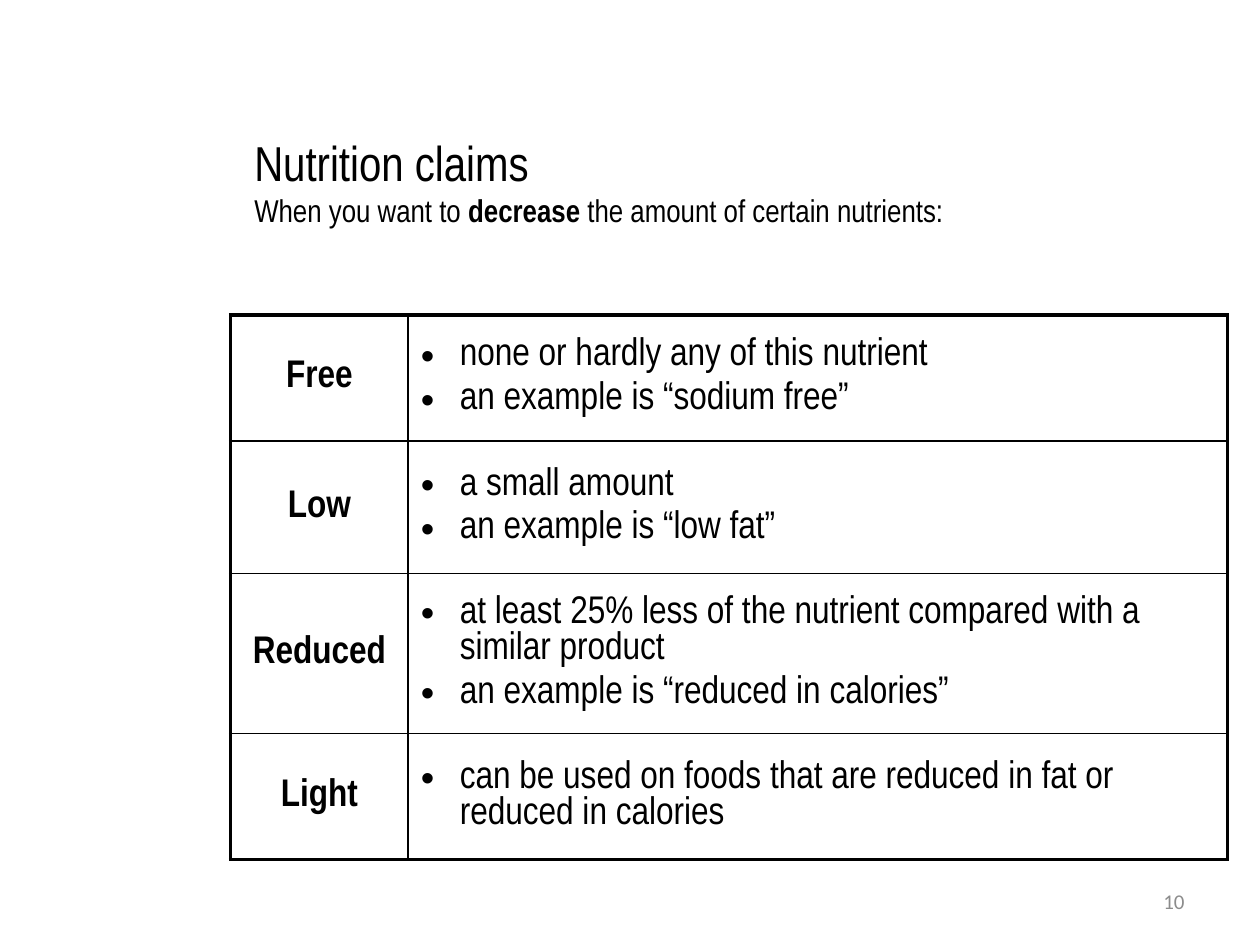
from pptx import Presentation
from pptx.dml.color import RGBColor
from pptx.enum.text import MSO_ANCHOR as Anchor, PP_ALIGN as Align
from pptx.oxml.ns import qn
from pptx.util import Inches, Pt
from lxml.etree import SubElement

BLACK = RGBColor(0, 0, 0)
GREY = RGBColor(0x8C, 0x8C, 0x8C)
BODY_FONT = "Arial Narrow"
THICK, THIN = Pt(2.25), Pt(1)

CLAIMS = [
    ("Free", 1, ["none or hardly any of this nutrient",
                 "an example is “sodium free”"]),
    ("Low", 1.05, ["a small amount", "an example is “low fat”"]),
    ("Reduced", 1.27, ["at least 25% less of the nutrient compared with a similar product",
                       "an example is “reduced in calories”"]),
    ("Light", 1, ["can be used on foods that are reduced in fat or reduced in calories"]),
]
COLUMN_WIDTHS = [1.41, 6.5]


def add_run(p, text, size, bold=False, font=BODY_FONT, color=BLACK):
    """Append a formatted run to a paragraph."""
    r = p.add_run()
    r.text = text
    r.font.size, r.font.bold, r.font.name = Pt(size), bold, font
    r.font.color.rgb = color


def add_text_frame(slide, left, top, width, height):
    """Add a wrapping text box and return its text frame."""
    box = slide.shapes.add_textbox(Inches(left), Inches(top), Inches(width), Inches(height))
    box.text_frame.word_wrap = True
    return box.text_frame


def add_heading(slide, left, top, width, height):
    """Write the title and the line that introduces the table."""
    tf = add_text_frame(slide, left, top, width, height)
    add_run(tf.paragraphs[0], "Nutrition claims", 28)
    p = tf.add_paragraph()
    add_run(p, "When you want to ", 18)
    add_run(p, "decrease", 18, bold=True)
    add_run(p, " the amount of certain nutrients:", 18)


def set_borders(cell, widths):
    """Draw solid black borders, given in the order left, right, top, bottom."""
    tc_pr = cell._tc.get_or_add_tcPr()
    for side, width in zip("LRTB", widths):
        ln = SubElement(tc_pr, qn(f"a:ln{side}"), w=str(int(width)))
        fill = SubElement(ln, qn("a:solidFill"))
        SubElement(fill, qn("a:srgbClr"), val=str(BLACK))


def set_bullet(p):
    """Give a paragraph a round bullet with a hanging indent."""
    p_pr = p._p.get_or_add_pPr()
    indent = Inches(0.31)
    p_pr.set("marL", str(indent))
    p_pr.set("indent", str(-indent))
    SubElement(p_pr, qn("a:buFont"), typeface="Arial")
    SubElement(p_pr, qn("a:buChar"), char="•")


def fill_cell(cell, lines, is_term):
    """Write a bold centred term or a bulleted list of meanings."""
    cell.vertical_anchor = Anchor.MIDDLE
    tf = cell.text_frame
    tf.text = "\n".join(lines)
    for p in tf.paragraphs:
        p.space_before = Pt(4.4)
        if is_term:
            p.alignment = Align.CENTER
        else:
            set_bullet(p)
        for r in p.runs:
            r.font.size, r.font.bold, r.font.name = Pt(22), is_term, BODY_FONT
            r.font.color.rgb = BLACK


def add_claims_table(slide, left, top, width, height):
    """Add the table of claims with a thick frame and thin inner lines."""
    last_row, last_col = len(CLAIMS) - 1, len(COLUMN_WIDTHS) - 1
    table = slide.shapes.add_table(len(CLAIMS), len(COLUMN_WIDTHS), Inches(left),
                                   Inches(top), Inches(width), Inches(height)).table
    table.first_row = table.horz_banding = False
    for column, column_width in zip(table.columns, COLUMN_WIDTHS):
        column.width = Inches(column_width)
    for i, (term, row_height, meanings) in enumerate(CLAIMS):
        table.rows[i].height = Inches(row_height)
        for j, lines in enumerate(([term], meanings)):
            cell = table.cell(i, j)
            fill_cell(cell, lines, is_term=j == 0)
            on_edge = (j == 0, j == last_col, i == 0, i == last_row)
            set_borders(cell, [THICK if edge else THIN for edge in on_edge])
            cell.fill.background()


def add_slide_number(slide, left, top, width, height):
    """Write the slide number at the lower right."""
    tf = add_text_frame(slide, left, top, width, height)
    tf.vertical_anchor = Anchor.MIDDLE
    p = tf.paragraphs[0]
    p.alignment = Align.RIGHT
    add_run(p, "10", 12, font="Calibri", color=GREY)


def main():
    """Build the slide and save it."""
    prs = Presentation()
    prs.slide_width, prs.slide_height = Inches(10), Inches(7.5)
    s = prs.slides.add_slide(prs.slide_layouts[6])
    add_slide_number(s, 7.17, 6.95, 2.33, 0.4)
    add_heading(s, 1.92, 1, 7.83, 1.17)
    add_claims_table(s, 1.83, 2.5, 7.91, 4.32)
    prs.save("out.pptx")


if __name__ == "__main__":
    main()
